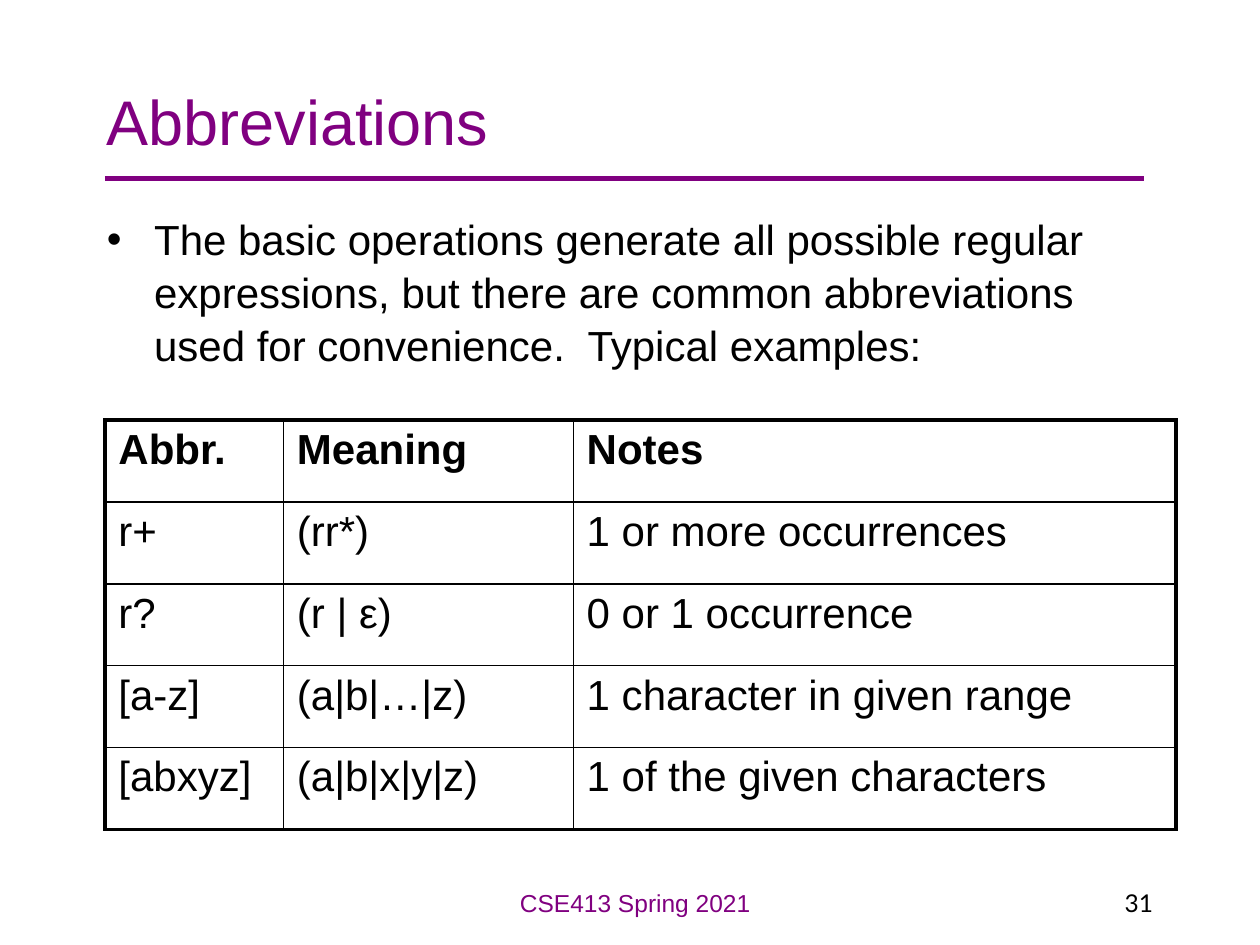
"""Build the slide on regular expression abbreviations."""
from dataclasses import dataclass

from lxml import etree
from pptx import Presentation
from pptx.dml.color import RGBColor
from pptx.enum import shapes, text
from pptx.oxml import ns
from pptx.util import Pt

HUES = {"purple": "800080", "black": "000000"}
COLS = (102, 165.6, 344.4)
ROW = 46.8
THIN, THICK = 1, 2.25
CELLS = (
    ("Abbr.", "Meaning", "Notes"),
    ("r+", "(rr*)", "1 or more occurrences"),
    ("r?", "(r | ε)", "0 or 1 occurrence"),
    ("[a-z]", "(a|b|…|z)", "1 character in given range"),
    ("[abxyz]", "(a|b|x|y|z)", "1 of the given characters"),
)


@dataclass
class Label:
    """A text box and its look, with lengths in points."""
    words: str
    box: tuple
    size: float
    hue: str = "black"
    font: str = "Arial"
    align: text.PP_ALIGN = text.PP_ALIGN.LEFT
    anchor: text.MSO_ANCHOR = text.MSO_ANCHOR.TOP
    bullet: bool = False


LABELS = (
    Label("Abbreviations", (54, 24, 612, 90), 36, "purple",
          anchor=text.MSO_ANCHOR.MIDDLE),
    Label("The basic operations generate all possible regular expressions, "
          "but there are common abbreviations used for convenience.  "
          "Typical examples:", (54, 117, 612, 105), 24, bullet=True),
    Label("CSE413 Spring 2021", (228, 504, 270, 36), 14, "purple",
          align=text.PP_ALIGN.CENTER),
    Label("31", (516, 504, 150, 36), 14, font="Lato",
          align=text.PP_ALIGN.RIGHT),
)


def style(para, size: float, hue: str, font: str = "Arial",
          bold: bool = False) -> None:
    """Format every run of a paragraph."""
    for run in para.runs:
        run.font.size = Pt(size)
        run.font.name = font
        run.font.bold = bold
        run.font.color.rgb = RGBColor.from_string(HUES[hue])


def add_dot(para) -> None:
    """Give a paragraph a hanging bullet."""
    para.line_spacing = 1.05
    props = para._p.get_or_add_pPr()
    props.set("marL", str(Pt(27)))
    props.set("indent", str(Pt(-27)))
    etree.SubElement(props, ns.qn("a:buFont")).set("typeface", "Arial")
    etree.SubElement(props, ns.qn("a:buChar")).set("char", "•")


def add_label(slide, label: Label) -> None:
    """Draw one text box."""
    frame = slide.shapes.add_textbox(*map(Pt, label.box)).text_frame
    frame.word_wrap = True
    frame.vertical_anchor = label.anchor
    frame.text = label.words
    para = frame.paragraphs[0]
    para.alignment = label.align
    style(para, label.size, label.hue, label.font)
    if label.bullet:
        add_dot(para)


def add_rule(slide) -> None:
    """Draw the line under the title."""
    rule = slide.shapes.add_connector(
        shapes.MSO_CONNECTOR.STRAIGHT, Pt(60), Pt(102), Pt(654), Pt(102))
    rule.line.color.rgb = RGBColor.from_string(HUES["purple"])
    rule.line.width = Pt(3)
    etree.SubElement(rule._element.spPr, ns.qn("a:effectLst"))


def add_edges(cell, widths: dict) -> None:
    """Set the cell borders, given in schema order."""
    props = cell._tc.get_or_add_tcPr()
    for pos, (side, width) in enumerate(widths.items()):
        edge = etree.Element(ns.qn(f"a:ln{side}"), w=str(Pt(width)))
        fill = etree.SubElement(edge, ns.qn("a:solidFill"))
        etree.SubElement(fill, ns.qn("a:srgbClr")).set("val", HUES["black"])
        props.insert(pos, edge)


def add_grid(slide) -> None:
    """Draw the table with a thick outer frame."""
    rows, cols = len(CELLS), len(COLS)
    grid = slide.shapes.add_table(
        rows, cols, Pt(60), Pt(240), Pt(sum(COLS)), Pt(ROW * rows)).table
    grid.first_row = grid.horz_banding = False
    for col, width in zip(grid.columns, COLS):
        col.width = Pt(width)
    for r, line in enumerate(CELLS):
        grid.rows[r].height = Pt(ROW)
        for c, words in enumerate(line):
            cell = grid.cell(r, c)
            cell.fill.background()
            cell.margin_left = cell.margin_right = Pt(7.7)
            cell.text_frame.text = words
            style(cell.text_frame.paragraphs[0], 24, "black", bold=r == 0)
            outer = {"L": c == 0, "R": c == cols - 1,
                     "T": r == 0, "B": r == rows - 1}
            add_edges(cell, {side: THICK if out else THIN
                             for side, out in outer.items()})


def main() -> None:
    """Build and save the slide."""
    deck = Presentation()
    deck.slide_width, deck.slide_height = Pt(720), Pt(540)
    slide = deck.slides.add_slide(deck.slide_layouts[6])
    add_rule(slide)
    add_grid(slide)
    for label in LABELS:
        add_label(slide, label)
    deck.save("out.pptx")


if __name__ == "__main__":
    main()
